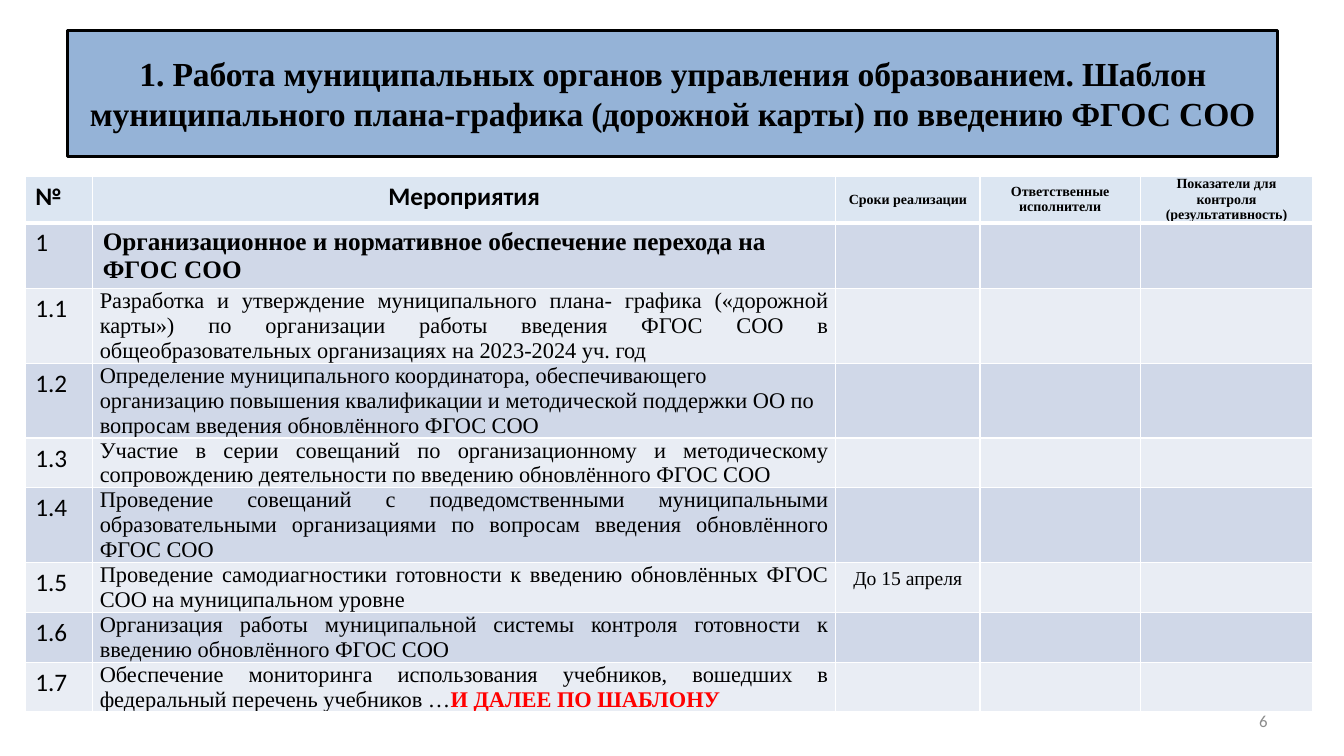
from lxml.etree import SubElement
from pptx import Presentation
from pptx.dml.color import RGBColor
from pptx.enum.text import MSO_ANCHOR, PP_ALIGN
from pptx.oxml import parse_xml
from pptx.oxml.ns import nsdecls, qn
from pptx.util import Inches, Pt

SERIF = "Times New Roman"
SANS = "Calibri"
TITLE = ("1. Работа муниципальных органов управления образованием. Шаблон "
         "муниципального плана-графика (дорожной карты) по введению ФГОС СОО")
SECTION = "Организационное и нормативное обеспечение перехода на ФГОС СОО"
SMALL_HEADINGS = ["Сроки реализации", "Ответственные исполнители",
                  "Показатели для контроля (результативность)"]
ACTIVITIES = [
    "Разработка и утверждение муниципального плана- графика («дорожной карты») "
    "по организации работы введения ФГОС СОО в общеобразовательных организациях "
    "на 2023-2024 уч. год",
    "Определение муниципального координатора, обеспечивающего организацию "
    "повышения квалификации и методической поддержки ОО по вопросам введения "
    "обновлённого ФГОС СОО",
    "Участие в серии совещаний по организационному и методическому "
    "сопровождению деятельности по введению обновлённого ФГОС СОО",
    "Проведение совещаний с подведомственными муниципальными образовательными "
    "организациями по вопросам введения обновлённого ФГОС СОО",
    "Проведение самодиагностики готовности к введению обновлённых ФГОС СОО "
    "на муниципальном уровне",
    "Организация работы муниципальной системы контроля готовности к введению "
    "обновлённого ФГОС СОО",
    "Обеспечение мониторинга использования учебников, вошедших в федеральный "
    "перечень учебников …",
]
CONTINUATION = "И ДАЛЕЕ ПО ШАБЛОНУ"
DEADLINES = {5: "До 15 апреля"}
LEFT_ALIGNED = {2}
COLUMN_WIDTHS = [0.67, 7.37, 1.43, 1.59, 1.71]
ROW_HEIGHTS = [0.45, 0.65, 0.74, 0.74, 0.49, 0.74, 0.49, 0.49, 0.49]
HEADER_FILL = "DCE6F2"
BAND_FILLS = ["E9EDF4", "D0D8E8"]


def color(value):
    """Return the colour for a hex string."""
    return RGBColor.from_string(value)


def add_span(para, text, size=18, font=SERIF, fill="000000", bold=False):
    """Append formatted text to a paragraph and return the run."""
    span = para.add_run()
    span.text = text
    span.font.size = Pt(size)
    span.font.name = font
    span.font.bold = bold
    span.font.color.rgb = color(fill)
    return span


def write(frame, text, align=PP_ALIGN.LEFT, **style):
    """Write one formatted paragraph into a text frame and return it."""
    para = frame.paragraphs[0]
    para.alignment = align
    add_span(para, text, **style)
    return para


def tighten(cell):
    """Reduce the margins of a table cell."""
    cell.margin_left = cell.margin_right = Inches(0.07)
    cell.margin_top = cell.margin_bottom = 0


def underline_cell(cell, width=3, fill="FFFFFF"):
    """Give a table cell a bottom border."""
    border = parse_xml(f'<a:lnB {nsdecls("a")} w="{Pt(width)}"/>')
    SubElement(SubElement(border, qn("a:solidFill")), qn("a:srgbClr")).set("val", fill)
    cell._tc.get_or_add_tcPr().insert(0, border)


def add_title(page):
    """Format the title placeholder as a framed banner."""
    box = page.shapes.title
    box.left, box.top = Inches(0.67), Inches(0.3)
    box.width, box.height = Inches(12), Inches(1.25)
    box.fill.solid()
    box.fill.fore_color.rgb = color("95B3D7")
    box.line.color.rgb = color("000000")
    box.line.width = Pt(2.25)
    box.text_frame.vertical_anchor = MSO_ANCHOR.MIDDLE
    para = write(box.text_frame, TITLE, PP_ALIGN.CENTER, size=24, bold=True)
    para.runs[0]._r.get_or_add_rPr().set("spc", "-10")


def add_page_number(page):
    """Add the slide number at the lower right."""
    box = page.shapes.add_textbox(Inches(9.56), Inches(6.95), Inches(3.11), Inches(0.4))
    box.text_frame.word_wrap = True
    box.text_frame.vertical_anchor = MSO_ANCHOR.MIDDLE
    write(box.text_frame, "6", PP_ALIGN.RIGHT, size=12, font=SANS, fill="8C8C8C")


def add_grid(page):
    """Add the sized and banded empty table."""
    frame = page.shapes.add_table(
        len(ROW_HEIGHTS), len(COLUMN_WIDTHS), Inches(0.25), Inches(1.75),
        Inches(sum(COLUMN_WIDTHS)), Inches(sum(ROW_HEIGHTS)))
    table = frame.table
    for column, width in zip(table.columns, COLUMN_WIDTHS):
        column.width = Inches(width)
    for index, (row, height) in enumerate(zip(table.rows, ROW_HEIGHTS)):
        row.height = Inches(height)
        for cell in row.cells:
            cell.fill.solid()
            cell.fill.fore_color.rgb = color(BAND_FILLS[index % 2] if index else HEADER_FILL)
    for cell in table.rows[0].cells:
        underline_cell(cell)
    return table


def fill_headings(table):
    """Write the header row and the section row."""
    write(table.cell(0, 0).text_frame, "№", font=SANS, bold=True)
    write(table.cell(0, 1).text_frame, "Мероприятия", PP_ALIGN.CENTER, font=SANS, bold=True)
    for column, heading in enumerate(SMALL_HEADINGS, start=2):
        cell = table.cell(0, column)
        tighten(cell)
        cell.vertical_anchor = MSO_ANCHOR.MIDDLE
        write(cell.text_frame, heading, PP_ALIGN.CENTER, size=10, bold=True)
    write(table.cell(1, 0).text_frame, "1", font=SANS)
    write(table.cell(1, 1).text_frame, SECTION, bold=True)


def fill_activities(table):
    """Write the numbered activities and their deadlines."""
    for number, activity in enumerate(ACTIVITIES, start=1):
        row = number + 1
        write(table.cell(row, 0).text_frame, f"1.{number}", font=SANS)
        cell = table.cell(row, 1)
        tighten(cell)
        align = PP_ALIGN.LEFT if number in LEFT_ALIGNED else PP_ALIGN.JUSTIFY
        para = write(cell.text_frame, activity, align, size=16)
        if number == len(ACTIVITIES):
            add_span(para, CONTINUATION, size=16, fill="FF0000", bold=True)
        if number in DEADLINES:
            write(table.cell(row, 2).text_frame, DEADLINES[number], PP_ALIGN.CENTER, size=14)


def main():
    """Build and save the slide."""
    deck = Presentation()
    deck.slide_width, deck.slide_height = Inches(13.33), Inches(7.5)
    page = deck.slides.add_slide(deck.slide_layouts[5])
    add_title(page)
    table = add_grid(page)
    fill_headings(table)
    fill_activities(table)
    add_page_number(page)
    deck.save("out.pptx")


if __name__ == "__main__":
    main()
